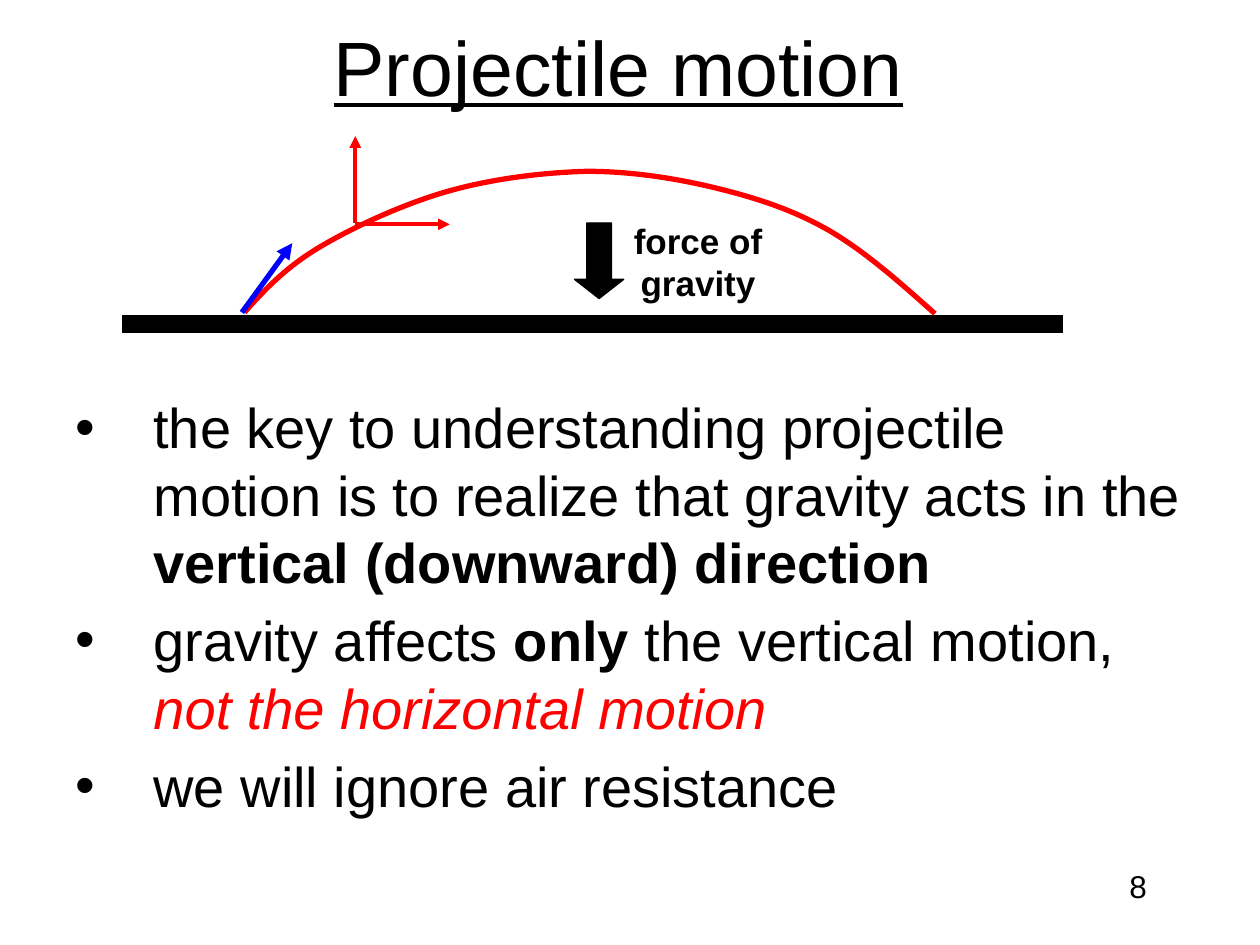
from lxml import etree
from pptx import Presentation
from pptx.dml.color import RGBColor
from pptx.enum.shapes import MSO_CONNECTOR as Connector, MSO_SHAPE as Shape
from pptx.enum.text import PP_ALIGN as Align
from pptx.oxml.ns import qn
from pptx.util import Inches, Pt

COLORS = {"black": "000000", "red": "FF0000", "blue": "0000FF"}

# Start point, then two control points and an end point for each arc
TRAJECTORY = [
    (1.94, 2.48),
    (2.1, 2.3), (2.27, 2.12), (2.54, 1.96),
    (2.81, 1.8), (3.2, 1.62), (3.55, 1.52),
    (3.9, 1.42), (4.3, 1.37), (4.66, 1.36),
    (5.02, 1.36), (5.39, 1.42), (5.71, 1.5),
    (6.03, 1.58), (6.3, 1.67), (6.58, 1.83),
    (6.87, 2), (7.14, 2.24), (7.42, 2.49),
]

BULLETS = [
    [("the key to understanding projectile motion is to realize that gravity acts in the ", {}),
     ("vertical (downward) direction", {"bold": True})],
    [("gravity affects ", {}), ("only", {"bold": True}), (" the vertical motion, ", {}),
     ("not the horizontal motion", {"italic": True, "color": "red"})],
    [("we will ignore air resistance", {})],
]


class SlideBuilder:
    def __init__(self, slide, font="Arial"):
        self.slide = slide
        self.font = font

    def color(self, name):
        return RGBColor.from_string(COLORS[name])

    def stroke(self, line, color, width):
        line.color.rgb = self.color(color)
        line.width = Pt(width)

    def text(self, at, paragraphs, size, align=Align.LEFT, wrap=True, inset=None, **style):
        """Add a text box; each paragraph is a list of (text, format) spans."""
        box = self.slide.shapes.add_textbox(*map(Inches, at))
        frame = box.text_frame
        frame.word_wrap = wrap
        if inset is not None:
            for side in ("left", "top", "right", "bottom"):
                setattr(frame, f"margin_{side}", Inches(inset))
        for index, spans in enumerate(paragraphs):
            para = frame.add_paragraph() if index else frame.paragraphs[0]
            para.alignment = align
            for words, extra in spans:
                span = para.add_run()
                span.text = words
                values = {"name": self.font, "size": Pt(size), **style, **extra}
                span.font.color.rgb = self.color(values.pop("color", "black"))
                for name, value in values.items():
                    setattr(span.font, name, value)
        return box

    def bullets(self, at, paragraphs, size, indent):
        box = self.text(at, paragraphs, size)
        for para in box.text_frame.paragraphs:
            para.space_before = Pt(size * 0.2)
            properties = para._p.get_or_add_pPr()
            properties.set("marL", str(Inches(indent)))
            properties.set("indent", str(-Inches(indent)))
            etree.SubElement(properties, qn("a:buFont"), typeface=self.font)
            etree.SubElement(properties, qn("a:buChar"), char="•")

    def line(self, start, end, color, width, arrow=False):
        line = self.slide.shapes.add_connector(
            Connector.STRAIGHT, *map(Inches, (*start, *end)))
        self.stroke(line.line, color, width)
        if arrow:
            etree.SubElement(line.line._get_or_add_ln(), qn("a:tailEnd"), type="triangle")
        etree.SubElement(line._element.spPr, qn("a:effectLst"))

    def down_arrow(self, at, color, head):
        arrow = self.slide.shapes.add_shape(Shape.DOWN_ARROW, *map(Inches, at))
        arrow.adjustments[1] = head
        arrow.shadow.inherit = False
        arrow.fill.solid()
        arrow.fill.fore_color.rgb = self.color(color)
        self.stroke(arrow.line, color, 0.75)

    def curve(self, points, color, width):
        """Draw an open outline, turning every three points into one Bézier arc."""
        start, *rest = [tuple(map(Inches, point)) for point in points]
        builder = self.slide.shapes.build_freeform(*start)
        builder.add_line_segments(rest, close=False)
        curve = builder.convert_to_shape()
        segments = list(curve._element.iter(qn("a:lnTo")))
        for first in range(0, len(segments), 3):
            arc = etree.Element(qn("a:cubicBezTo"))
            segments[first].addprevious(arc)
            for segment in segments[first:first + 3]:
                arc.append(segment[0])
                segment.getparent().remove(segment)
        curve.shadow.inherit = False
        curve.fill.background()
        self.stroke(curve.line, color, width)


def main():
    deck = Presentation()
    deck.slide_width, deck.slide_height = Inches(10), Inches(7.5)
    page = SlideBuilder(deck.slides.add_slide(deck.slide_layouts[6]))

    page.text((2.55, 0.11, 4.77, 0.84), [[("Projectile motion", {})]], 44,
              wrap=False, underline=True)

    page.line((0.97, 2.57), (8.44, 2.57), "black", 10.25)
    page.line((2.82, 1.77), (2.82, 1.08), "red", 2.25, arrow=True)
    page.down_arrow((4.56, 1.77, 0.39, 0.6), "black", 0.39)
    page.text((4.95, 1.74, 1.18, 0.67), [[("force of", {})], [("gravity", {})]], 20,
              align=Align.CENTER, inset=0, bold=True)
    page.curve(TRAJECTORY, "red", 3)
    page.line((2.82, 1.78), (3.57, 1.78), "red", 2.25, arrow=True)
    page.line((1.92, 2.48), (2.32, 1.93), "blue", 3, arrow=True)

    page.bullets((0.5, 3.07, 9, 3.64), BULLETS, 32, indent=0.62)
    page.text((7.17, 6.83, 2.03, 0.52), [[("8", {})]], 18, align=Align.RIGHT)

    deck.save("out.pptx")


if __name__ == "__main__":
    main()
